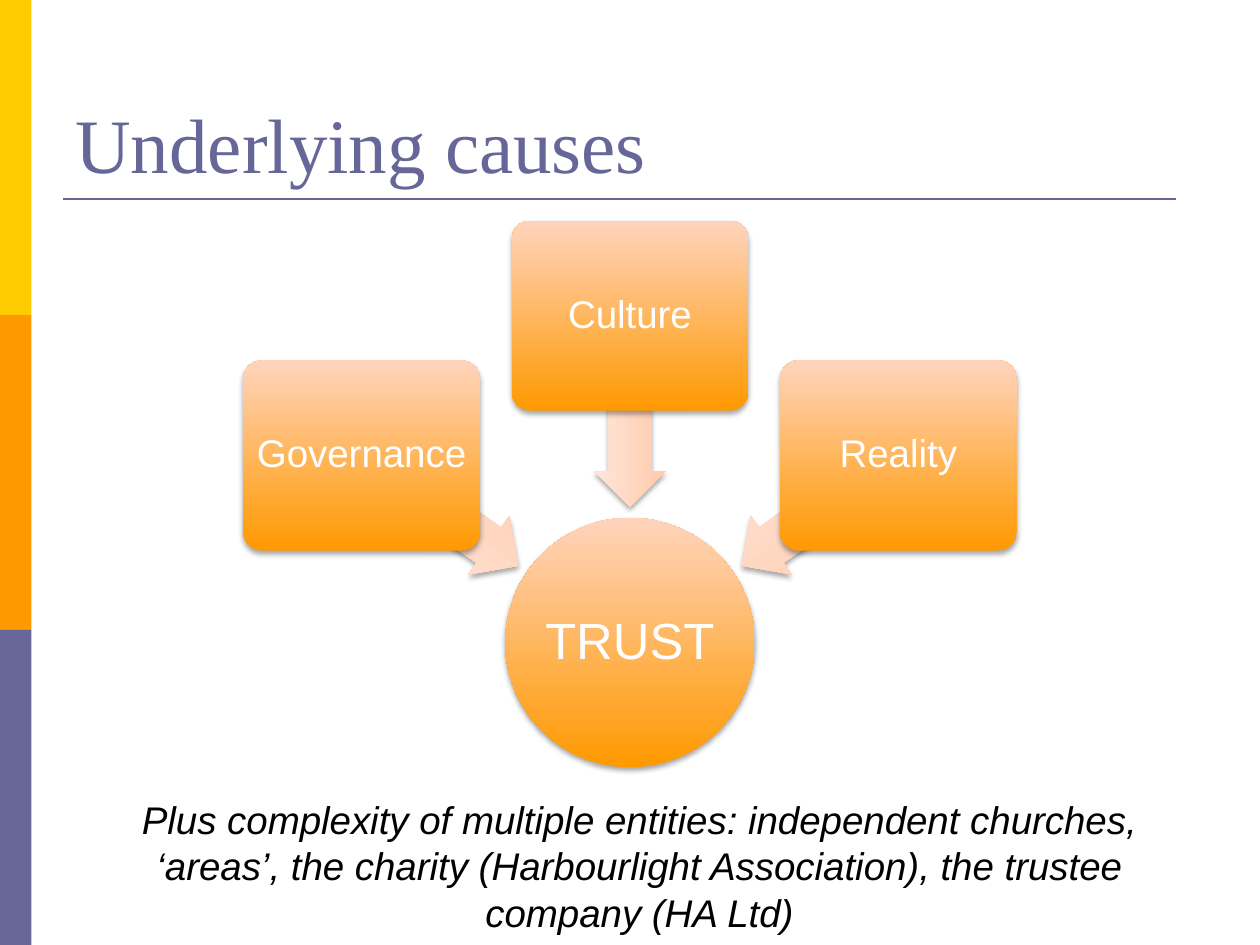
from lxml import etree
from pptx import Presentation
from pptx.dml.color import RGBColor
from pptx.enum.shapes import MSO_CONNECTOR, MSO_SHAPE
from pptx.enum.text import MSO_ANCHOR, PP_ALIGN
from pptx.oxml.ns import qn
from pptx.util import Inches, Pt

RECT, ROUNDED = MSO_SHAPE.RECTANGLE, MSO_SHAPE.ROUNDED_RECTANGLE
OVAL, ARROW = MSO_SHAPE.OVAL, MSO_SHAPE.LEFT_ARROW
STRAIGHT = MSO_CONNECTOR.STRAIGHT
TOP, MIDDLE, BOTTOM = MSO_ANCHOR.TOP, MSO_ANCHOR.MIDDLE, MSO_ANCHOR.BOTTOM
LEFT, CENTER = PP_ALIGN.LEFT, PP_ALIGN.CENTER

YELLOW = RGBColor(0xFF, 0xCC, 0x00)
ORANGE = RGBColor(0xFF, 0x99, 0x00)
PEACH = RGBColor(0xFF, 0xD4, 0xBD)
ARROW_DARK = RGBColor(0xFF, 0xCA, 0xAB)
ARROW_LIGHT = RGBColor(0xFF, 0xE6, 0xDA)
VIOLET = RGBColor(0x66, 0x66, 0x99)
WHITE = RGBColor(0xFF, 0xFF, 0xFF)
BLACK = RGBColor(0, 0, 0)

CAUSE_SIZE = (1.88, 1.51)
ARROW_SIZE = (1.52, 0.57)
# Cause, box corner, arrow corner, arrow rotation; relative to the diagram
CAUSES = [
    ("Governance", (0, 1.11), (0.8, 2.02), 215),
    ("Culture", (2.13, 0), (2.31, 1.23), 270),
    ("Reality", (4.26, 1.11), (3.82, 2.02), 325),
]


def write(shape, text, size, color, font="Arial", align=CENTER, anchor=MIDDLE,
          italic=False):
    frame = shape.text_frame
    frame.word_wrap = True
    frame.vertical_anchor = anchor
    paragraph = frame.paragraphs[0]
    paragraph.alignment = align
    run = paragraph.add_run()
    run.text = text
    run.font.size = Pt(size)
    run.font.name = font
    run.font.italic = italic
    run.font.color.rgb = color


def add_text(slide, box, text, size, color, **style):
    textbox = slide.shapes.add_textbox(*map(Inches, box))
    write(textbox, text, size, color, **style)


def add_shadow(shape):
    shape.shadow.inherit = False
    effects = shape._element.spPr.find(qn("a:effectLst"))
    shadow = etree.SubElement(effects, qn("a:outerShdw"), blurRad=str(Pt(3.1)),
                              dist=str(Pt(1.8)), dir="5400000", rotWithShape="0")
    black = etree.SubElement(shadow, qn("a:srgbClr"), val="000000")
    etree.SubElement(black, qn("a:alpha"), val="35000")


def add_glossy(slide, kind, box, dark, light):
    """Borderless shape shaded from dark at the bottom to light at the top."""
    shape = slide.shapes.add_shape(kind, *map(Inches, box))
    shape.fill.gradient()
    shape.fill.gradient_angle = 90
    for stop, color, position in zip(shape.fill.gradient_stops, (dark, light), (0, 1)):
        stop.color.rgb = color
        stop.position = position
    shape.line.fill.background()
    add_shadow(shape)
    return shape


def add_label(shape, text, size, inset):
    frame = shape.text_frame
    frame.margin_left = frame.margin_right = Inches(inset)
    frame.margin_top = frame.margin_bottom = Inches(inset)
    write(shape, text, size, WHITE)
    frame.paragraphs[0].line_spacing = 0.9


def add_side_bar(slide, left, top, width, height):
    colors = (YELLOW, ORANGE, VIOLET)
    band_height = height / len(colors)
    for i, color in enumerate(colors):
        band = slide.shapes.add_shape(RECT, Inches(left), Inches(top + i * band_height),
                                      Inches(width), Inches(band_height))
        band.shadow.inherit = False
        band.fill.solid()
        band.fill.fore_color.rgb = color
        band.line.fill.background()


def add_heading(slide, left, top, width, height):
    rule_y = Inches(top + height + 0.03)
    rule = slide.shapes.add_connector(STRAIGHT, Inches(left), rule_y,
                                      Inches(left + 8.83), rule_y)
    rule.line.color.rgb = VIOLET
    rule.line.width = Pt(1.5)
    etree.SubElement(rule._element.spPr, qn("a:effectLst"))
    add_text(slide, (left, top, width, height), "Underlying causes", 44, VIOLET,
             font="Times New Roman", align=LEFT, anchor=BOTTOM)


def add_trust_diagram(slide, left, top):
    # Central circle
    trust = add_glossy(slide, OVAL, (left + 2.08, top + 2.36, 1.98, 1.98), ORANGE, PEACH)
    add_label(trust, "TRUST", 29, 0.02)

    # Causes, each over the tail of its arrow
    for name, (box_x, box_y), (arrow_x, arrow_y), rotation in CAUSES:
        arrow = add_glossy(slide, ARROW, (left + arrow_x, top + arrow_y, *ARROW_SIZE),
                           ARROW_DARK, ARROW_LIGHT)
        arrow.adjustments[0] = 0.6
        arrow.adjustments[1] = 0.5
        arrow.rotation = rotation
        cause = add_glossy(slide, ROUNDED, (left + box_x, top + box_y, *CAUSE_SIZE),
                           ORANGE, PEACH)
        cause.adjustments[0] = 0.1
        add_label(cause, name, 22, 0.05)


def add_remark(slide, *box):
    add_text(slide, box,
             "Plus complexity of multiple entities: independent churches, ‘areas’, "
             "the charity (Harbourlight Association), the trustee company (HA Ltd)",
             22, BLACK, anchor=TOP, italic=True)


def main():
    prs = Presentation()
    prs.slide_width, prs.slide_height = Inches(10), Inches(7.5)
    slide = prs.slides.add_slide(prs.slide_layouts[6])
    add_side_bar(slide, 0, 0, 0.25, 7.5)
    add_heading(slide, 0.5, 0.3, 9, 1.25)
    add_trust_diagram(slide, 1.93, 1.75)
    add_remark(slide, 0.65, 6.27, 8.85, 1.21)
    prs.save("out.pptx")


if __name__ == "__main__":
    main()
